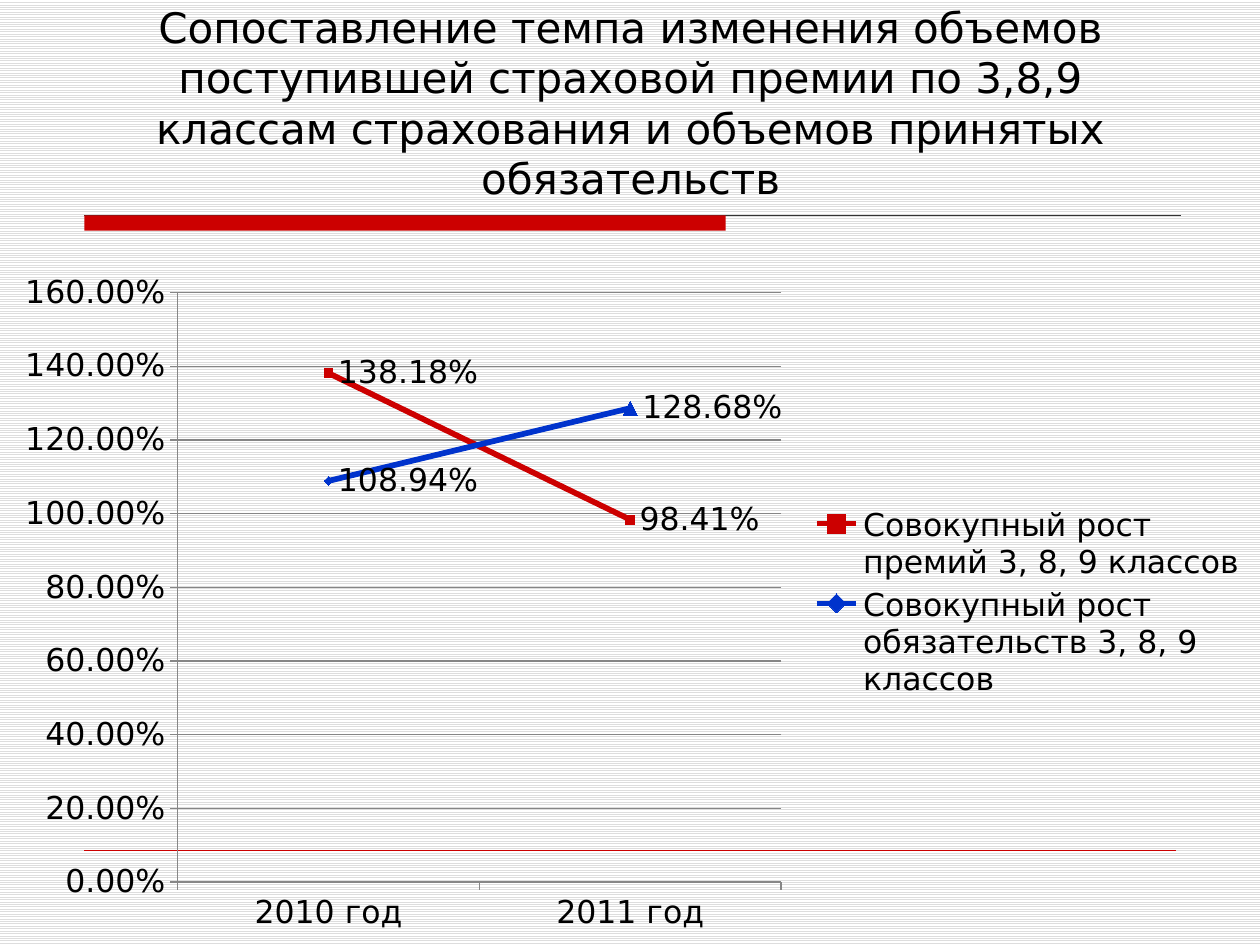
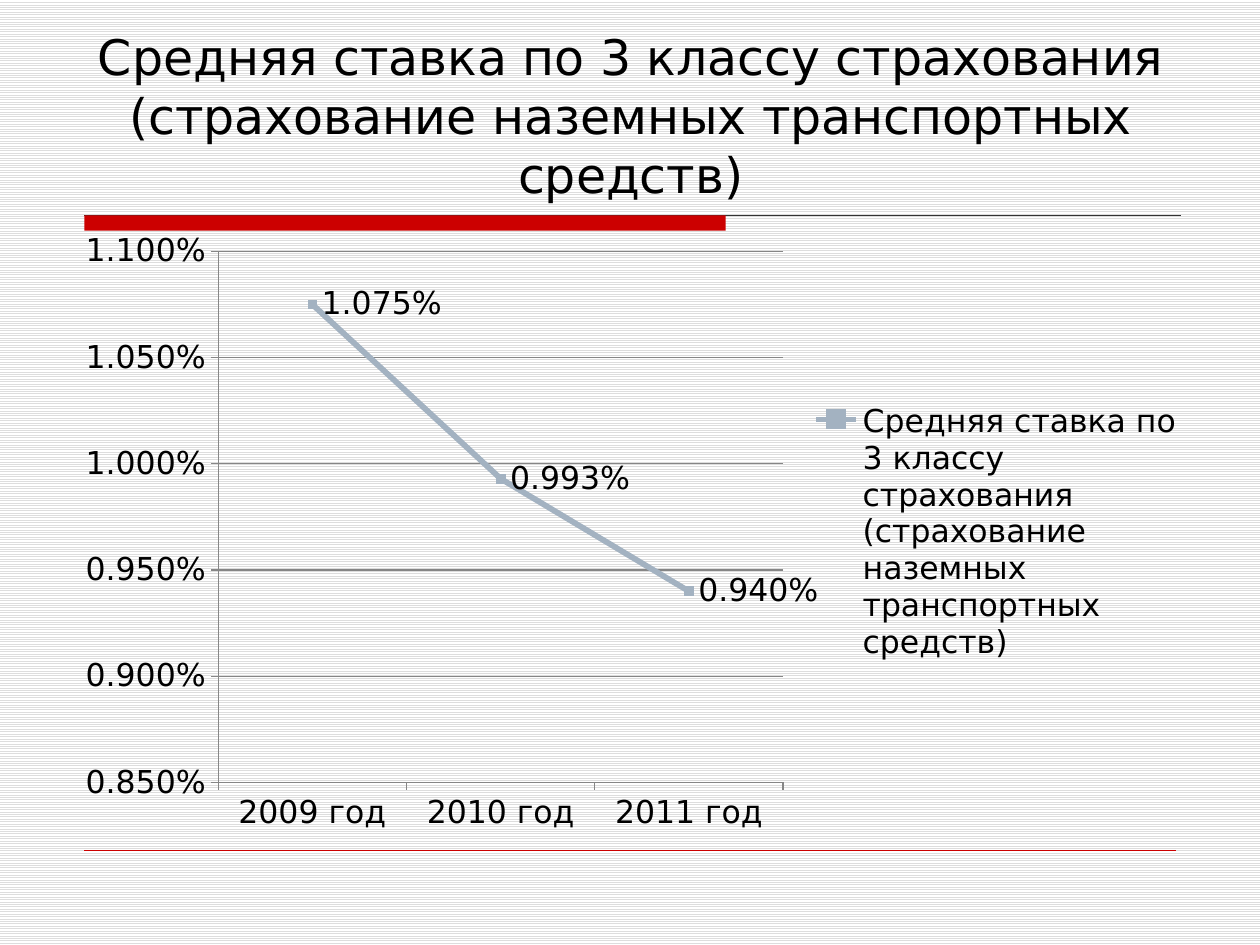
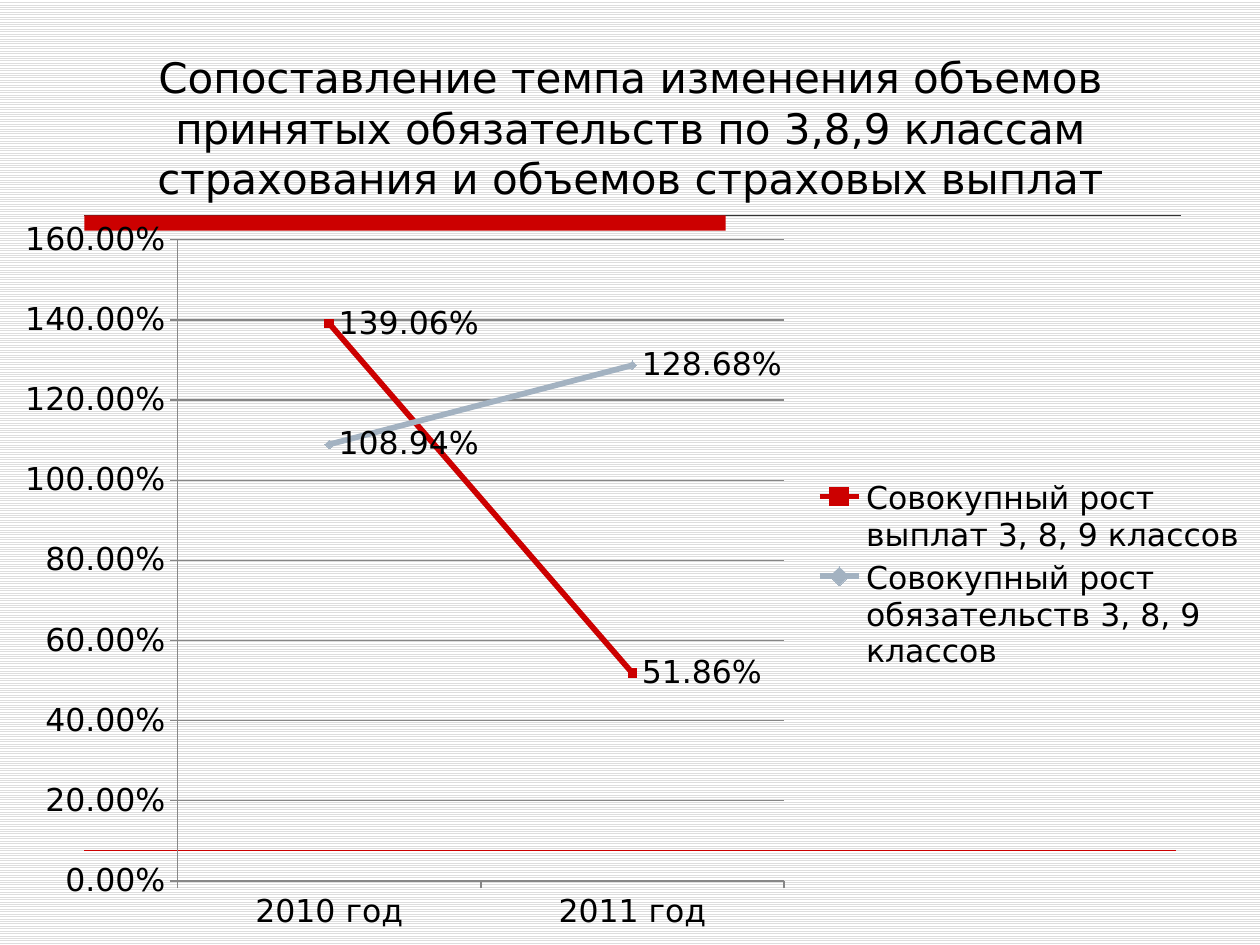
from dataclasses import dataclass

from lxml import etree
from pptx import Presentation
from pptx.chart.data import CategoryChartData
from pptx.dml.color import RGBColor
from pptx.enum.chart import (XL_CHART_TYPE, XL_LABEL_POSITION,
                             XL_LEGEND_POSITION, XL_MARKER_STYLE, XL_TICK_MARK)
from pptx.enum.dml import MSO_PATTERN
from pptx.enum.shapes import MSO_CONNECTOR, MSO_SHAPE
from pptx.enum.text import MSO_ANCHOR, PP_ALIGN
from pptx.oxml.ns import qn
from pptx.util import Inches, Pt

LINE_MARKERS = XL_CHART_TYPE.LINE_MARKERS
LABEL_RIGHT = XL_LABEL_POSITION.RIGHT
LEGEND_RIGHT = XL_LEGEND_POSITION.RIGHT
TICK_OUT = XL_TICK_MARK.OUTSIDE
SERIES_MARKERS = (XL_MARKER_STYLE.SQUARE, XL_MARKER_STYLE.DIAMOND)
TRIANGLE = XL_MARKER_STYLE.TRIANGLE
STRIPES = MSO_PATTERN.LIGHT_HORIZONTAL
STRAIGHT = MSO_CONNECTOR.STRAIGHT
RECTANGLE = MSO_SHAPE.RECTANGLE

BLACK = RGBColor(0x00, 0x00, 0x00)
WHITE = RGBColor(0xFF, 0xFF, 0xFF)
STRIPE_GRAY = RGBColor(0xDD, 0xDD, 0xDD)
RULE_GRAY = RGBColor(0x33, 0x33, 0x33)
GRID_GRAY = RGBColor(0x86, 0x86, 0x86)
RED = RGBColor(0xCC, 0x00, 0x00)
BLUE = RGBColor(0x00, 0x33, 0xCC)
STEEL = RGBColor(0xA3, 0xB2, 0xC1)

FONT = "DejaVu Sans"
CHART_TEXT_SIZE = 18
TITLE_BOX = (0.63, 0.33, 8.75, 1.33)
HEADER_BOX = (0.67, 1.71, 8.7, 0.12)
BAND_WIDTH = 5.09
FOOTER_RULE = (0.67, 6.75, 8.66)


@dataclass
class Growth:
    """One line of a chart; raised_point is the index of a triangle marker."""
    name: str
    values: tuple
    color: RGBColor
    raised_point: int | None = None


@dataclass
class Scale:
    low: float
    high: float
    step: float
    number_format: str


GROWTH_SCALE = Scale(0, 1.6, 0.2, "0.00%")
RATE_SCALE = Scale(0.0085, 0.011, 0.0005, "0.000%")
COMPARED_YEARS = ("2010 год", "2011 год")
OBLIGATIONS = "Совокупный рост обязательств 3, 8, 9 классов"
OBLIGATION_GROWTH = (1.0894, 1.2868)

# title, title size, chart box, years, scale, lines
SLIDES = (
    ("Сопоставление темпа изменения объемов поступившей страховой премии "
     "по 3,8,9 классам страхования и объемов принятых обязательств",
     24, (0, 2.07, 10, 5.43), COMPARED_YEARS, GROWTH_SCALE,
     (Growth("Совокупный рост премий 3, 8, 9 классов", (1.3818, 0.9841), RED),
      Growth(OBLIGATIONS, OBLIGATION_GROWTH, BLUE, raised_point=1))),
    ("Средняя ставка по 3 классу страхования "
     "(страхование наземных транспортных средств)",
     28, (0.5, 1.75, 9, 4.95), ("2009 год",) + COMPARED_YEARS, RATE_SCALE,
     (Growth("Средняя ставка по 3 классу страхования "
             "(страхование наземных транспортных средств)",
             (0.01075, 0.00993, 0.0094), STEEL),)),
    ("Сопоставление темпа изменения объемов принятых обязательств "
     "по 3,8,9 классам страхования и объемов страховых выплат",
     24, (0, 1.64, 10, 5.86), COMPARED_YEARS, GROWTH_SCALE,
     (Growth("Совокупный рост выплат 3, 8, 9 классов", (1.3906, 0.5186), RED),
      Growth(OBLIGATIONS, OBLIGATION_GROWTH, STEEL))),
)


def inches(*lengths):
    return [Inches(length) for length in lengths]


def style_font(font, size):
    font.name = FONT
    font.size = Pt(size)
    font.color.rgb = BLACK


def add_rule(slide, left, top, width, color, weight):
    rule = slide.shapes.add_connector(
        STRAIGHT, *inches(left, top, left + width, top))
    rule.line.color.rgb = color
    rule.line.width = Pt(weight)
    etree.SubElement(rule._element.spPr, qn("a:effectLst"))


def add_header_band(slide, box):
    left, top, width, height = box
    add_rule(slide, left, top, width, RULE_GRAY, 0.75)
    band = slide.shapes.add_shape(
        RECTANGLE, *inches(left, top, BAND_WIDTH, height))
    band.shadow.inherit = False
    band.fill.solid()
    band.fill.fore_color.rgb = RED
    band.line.fill.background()


def add_title(slide, box, title, size):
    frame = slide.shapes.add_textbox(*inches(*box)).text_frame
    frame.word_wrap = True
    frame.vertical_anchor = MSO_ANCHOR.BOTTOM
    frame.text = title
    paragraph = frame.paragraphs[0]
    paragraph.alignment = PP_ALIGN.CENTER
    style_font(paragraph.runs[0].font, size)


def style_marker(marker, style, size, color):
    marker.style = style
    marker.size = size
    marker.format.fill.solid()
    marker.format.fill.fore_color.rgb = color
    marker.format.line.color.rgb = color


def style_growth_line(series, growth, marker_style, number_format):
    series.smooth = False
    series.format.line.color.rgb = growth.color
    series.format.line.width = Pt(3.25)
    style_marker(series.marker, marker_style, 5, growth.color)
    if growth.raised_point is not None:
        point = series.points[growth.raised_point]
        style_marker(point.marker, TRIANGLE, 8, growth.color)
        point.format.line.color.rgb = growth.color
        point.format.line.width = Pt(3.25)
    labels = series.data_labels
    labels.show_value = True
    labels.position = LABEL_RIGHT
    labels.number_format = number_format
    labels.number_format_is_linked = False
    style_font(labels.font, CHART_TEXT_SIZE)


def style_axes(chart, scale):
    for axis in (chart.category_axis, chart.value_axis):
        axis.major_tick_mark = TICK_OUT
        axis.format.line.color.rgb = GRID_GRAY
        axis.format.line.width = Pt(0.75)
    values = chart.value_axis
    values.minimum_scale = scale.low
    values.maximum_scale = scale.high
    values.major_unit = scale.step
    values.tick_labels.number_format = scale.number_format
    values.tick_labels.number_format_is_linked = False
    values.has_major_gridlines = True
    values.major_gridlines.format.line.color.rgb = GRID_GRAY
    values.major_gridlines.format.line.width = Pt(0.75)


def add_growth_chart(slide, box, years, scale, growths):
    data = CategoryChartData(number_format=scale.number_format)
    data.categories = years
    for growth in growths:
        data.add_series(growth.name, growth.values)
    chart = slide.shapes.add_chart(LINE_MARKERS, *inches(*box), data).chart
    style_font(chart.font, CHART_TEXT_SIZE)
    chart.has_title = False
    chart.has_legend = True
    chart.legend.position = LEGEND_RIGHT
    chart.legend.include_in_layout = False
    style_axes(chart, scale)
    plot = chart.plots[0]
    plot.vary_by_categories = False
    for series, growth, marker in zip(plot.series, growths, SERIES_MARKERS):
        style_growth_line(series, growth, marker, scale.number_format)


def stripe_background(master):
    fill = master.background.fill
    fill.patterned()
    fill.pattern = STRIPES
    fill.fore_color.rgb = STRIPE_GRAY
    fill.back_color.rgb = WHITE


def add_chart_slide(prs, title, title_size, chart_box, years, scale, growths):
    slide = prs.slides.add_slide(prs.slide_layouts[6])
    add_header_band(slide, HEADER_BOX)
    add_rule(slide, *FOOTER_RULE, RED, 0.25)
    add_title(slide, TITLE_BOX, title, title_size)
    add_growth_chart(slide, chart_box, years, scale, growths)


def main():
    prs = Presentation()
    prs.slide_width, prs.slide_height = inches(10, 7.5)
    stripe_background(prs.slide_master)
    for content in SLIDES:
        add_chart_slide(prs, *content)
    prs.save("out.pptx")


if __name__ == "__main__":
    main()
